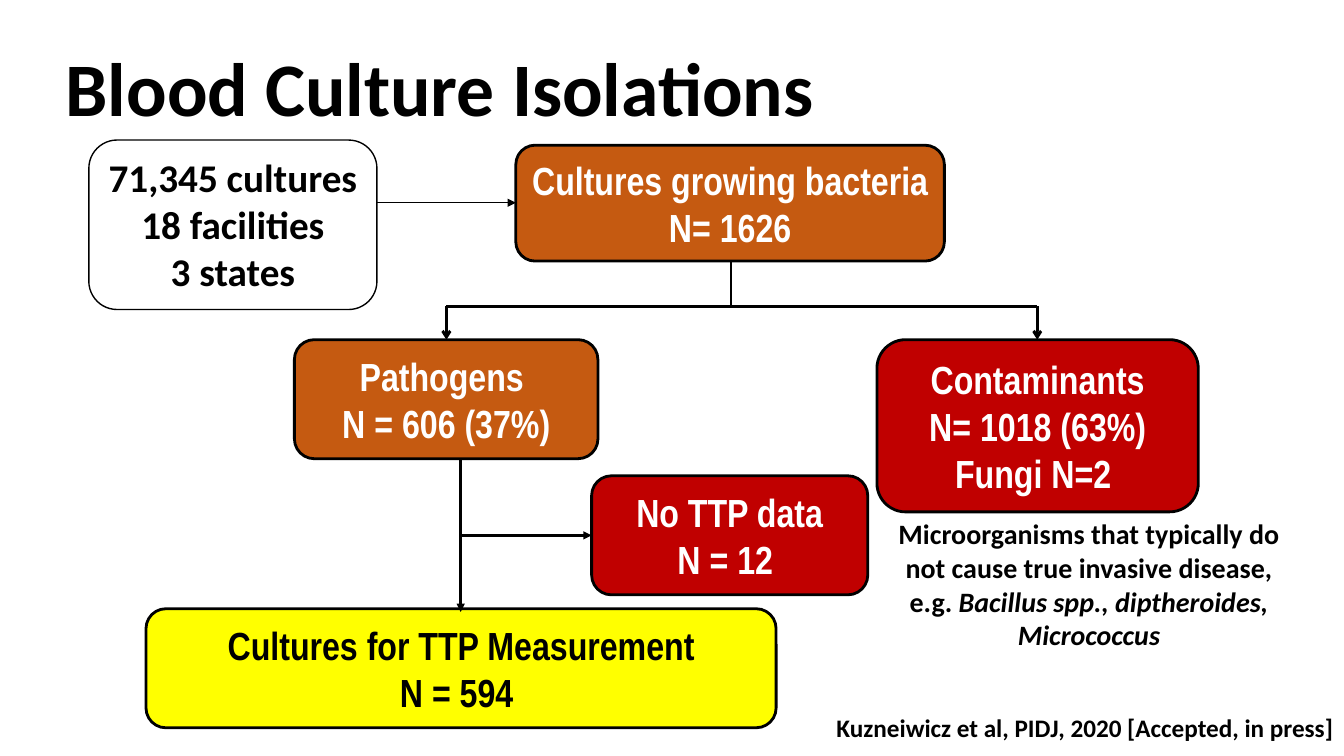
import pptx
import pptx.util
import pptx.dml.color
import pptx.enum.shapes
import pptx.enum.text
import lxml.etree
import pptx.oxml.ns
from pptx.util import Cm

ALIGN = pptx.enum.text.PP_ALIGN
ANCHOR = pptx.enum.text.MSO_ANCHOR
BLACK, WHITE = "000000", "FFFFFF"
ORANGE, RED, YELLOW = "C55A11", "C00000", "FFFF00"


def color(hex_string):
    return pptx.dml.color.RGBColor.from_string(hex_string)


class FlowSlide:
    """Style and element builders for one flow chart slide."""

    text_font = "Calibri"
    box_font = "Arial Narrow"
    box_size = 28

    def __init__(self, presentation):
        self.slide = presentation.slides.add_slide(presentation.slide_layouts[5])

    def style(self, paragraph, size, font=text_font, ink=BLACK, align=ALIGN.CENTER):
        paragraph.alignment = align
        paragraph.font.name = font
        paragraph.font.size = pptx.util.Pt(size)
        paragraph.font.bold = True
        paragraph.font.color.rgb = color(ink)

    def title(self, text, left, top, width, height):
        shape = self.slide.shapes.title
        shape.left, shape.top = Cm(left), Cm(top)
        shape.width, shape.height = Cm(width), Cm(height)
        frame = shape.text_frame
        frame.text = text
        frame.vertical_anchor = ANCHOR.MIDDLE
        self.style(frame.paragraphs[0], 54, align=ALIGN.LEFT)
        frame.paragraphs[0].line_spacing = 0.9

    def box(self, lines, left, top, width, height, fill, ink=WHITE,
            font=box_font, line_width=2, anchor=ANCHOR.MIDDLE):
        shape = self.slide.shapes.add_shape(
            pptx.enum.shapes.MSO_SHAPE.ROUNDED_RECTANGLE,
            Cm(left), Cm(top), Cm(width), Cm(height))
        shape.shadow.inherit = False
        shape.fill.solid()
        shape.fill.fore_color.rgb = color(fill)
        shape.line.color.rgb = color(BLACK)
        shape.line.width = pptx.util.Pt(line_width)
        frame = shape.text_frame
        frame.word_wrap = False
        frame.vertical_anchor = anchor
        frame.text = "\n".join(lines)
        for paragraph in frame.paragraphs:
            self.style(paragraph, self.box_size, font, ink)

    def text(self, runs, left, top, width, height, size, align=ALIGN.CENTER):
        """Add a one-paragraph text box from (text, italic) runs."""
        shape = self.slide.shapes.add_textbox(Cm(left), Cm(top), Cm(width), Cm(height))
        shape.text_frame.word_wrap = True
        paragraph = shape.text_frame.paragraphs[0]
        self.style(paragraph, size, align=align)
        for content, italic in runs:
            run = paragraph.add_run()
            run.text = content
            if italic:
                run.font.italic = True

    def line(self, x1, y1, x2, y2, width=2, head=None):
        connector = self.slide.shapes.add_connector(
            pptx.enum.shapes.MSO_CONNECTOR.STRAIGHT, Cm(x1), Cm(y1), Cm(x2), Cm(y2))
        connector.line.color.rgb = color(BLACK)
        connector.line.width = pptx.util.Pt(width)
        properties = connector._element.spPr
        if head:
            outline = properties.find(pptx.oxml.ns.qn("a:ln"))
            lxml.etree.SubElement(outline, pptx.oxml.ns.qn("a:tailEnd"), type=head)
        lxml.etree.SubElement(properties, pptx.oxml.ns.qn("a:effectLst"))


def main():
    presentation = pptx.Presentation()
    presentation.slide_width = Cm(33.87)
    presentation.slide_height = Cm(19.05)
    flow = FlowSlide(presentation)

    flow.title("Blood Culture Isolations", 1.4, 1.02, 31.32, 2.59)

    # Flow chart boxes
    flow.box(["Cultures growing bacteria", "N= 1626"], 13, 3.66, 10.8, 2.92, ORANGE)
    flow.box(["Contaminants", "N= 1018 (63%)", "Fungi N=2 "],
             22.1, 8.56, 8.1, 4.34, RED)
    flow.box(["Pathogens ", "N = 606 (37%)"], 7.42, 8.56, 7.65, 3, ORANGE)
    flow.box(["No TTP data", "N = 12 "], 14.91, 11.99, 6.96, 3, RED)
    flow.box(["Cultures for TTP Measurement", "N = 594 "],
             3.68, 15.34, 15.88, 3, YELLOW, ink=BLACK)

    # Pathogens to measurement, with the excluded branch
    stem_x = 11.61
    flow.line(stem_x, 11.56, stem_x, 15.42, 1.75, "triangle")
    flow.line(stem_x, 13.49, 14.91, 13.49, 1.75, "triangle")

    # Split into pathogens and contaminants
    split_y, pathogens_x, contaminants_x = 7.72, 11.25, 26.14
    flow.line(18.42, 6.58, 18.42, split_y)
    flow.line(contaminants_x, split_y, pathogens_x, split_y)
    for branch_x in (pathogens_x, contaminants_x):
        flow.line(branch_x, split_y, branch_x, 8.56, head="arrow")

    # Contaminants note
    flow.text([("Microorganisms that typically do not cause true invasive disease, e.g. ", False),
               ("Bacillus spp., diptheroides, Micrococcus", True)],
              22.1, 12.9, 10.69, 3.68, 20)

    # Study size and its arrow
    flow.box(["71,345 cultures", "18 facilities", "3 states"],
             2.24, 3.53, 7.26, 4.27, WHITE, ink=BLACK,
             font=flow.text_font, line_width=1, anchor=ANCHOR.TOP)
    flow.line(9.5, 5.11, 13, 5.11, 0.5, "triangle")

    # Citation
    flow.text([("Kuzneiwicz et al, PIDJ, 2020 [Accepted, in press]", False)],
              20.68, 17.83, 13.18, 1.02, 18, ALIGN.RIGHT)

    presentation.save("out.pptx")


if __name__ == "__main__":
    main()
